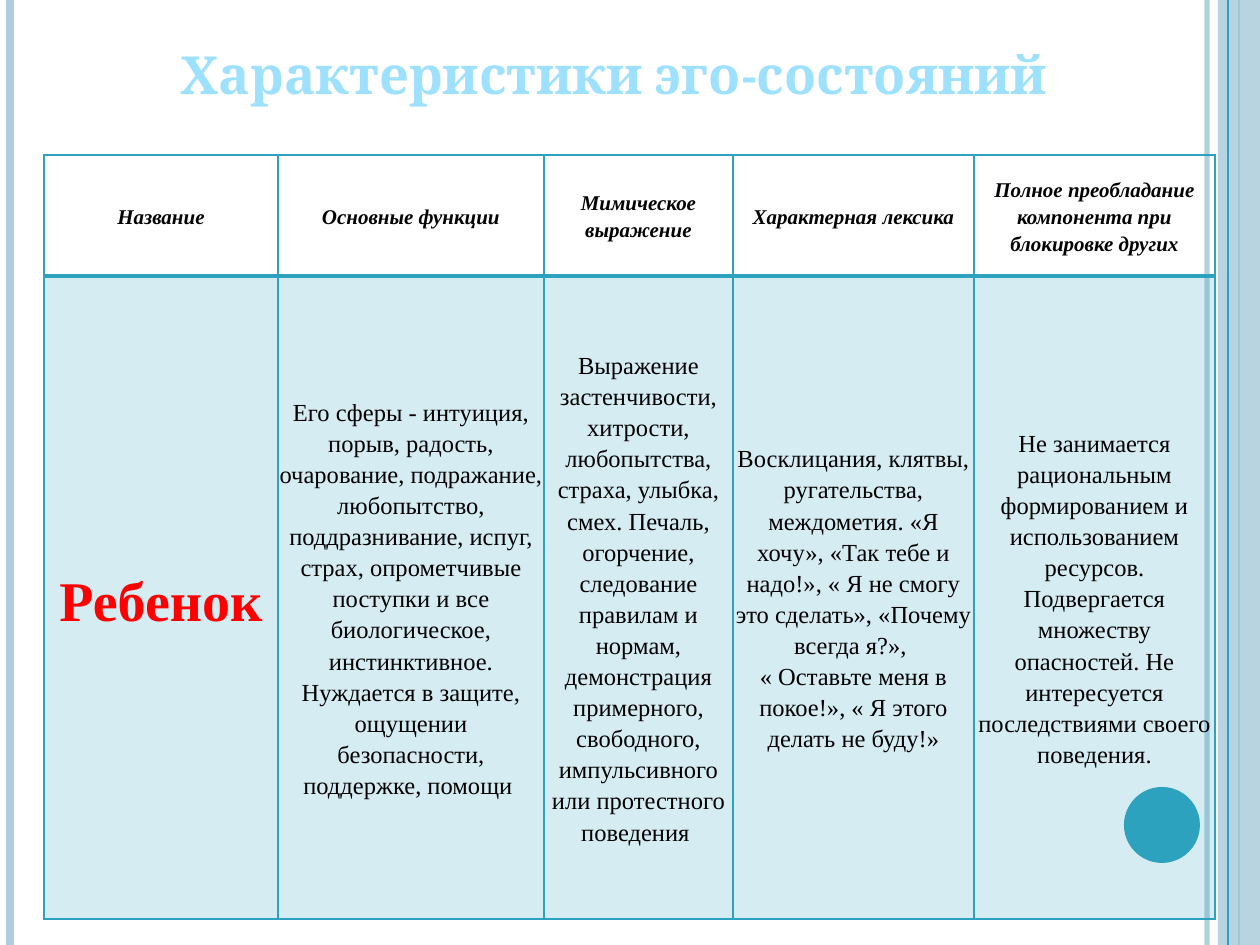
from pptx import Presentation
from pptx import util as u
from pptx.dml.color import RGBColor
from pptx.enum import shapes, text
from pptx.oxml import parse_xml
from pptx.oxml.ns import nsdecls, qn

PX = 914400 / 126
WIDE, HIGH = 1260, 945
HEX = {"teal": "2DA2BF", "pale": "ADCEDC", "sky": "9DE1FF",
       "red": "FF0000", "black": "000000"}
SERIF = "Times New Roman"

TITLE = "Характеристики эго-состояний"
HEADS = ["Название", "Основные функции", "Мимическое выражение",
         "Характерная лексика",
         "Полное преобладание компонента при блокировке других"]
CHILD = [
    "Ребенок",
    "Его сферы - интуиция, порыв, радость, очарование, подражание, "
    "любопытство, поддразнивание, испуг, страх, опрометчивые поступки и все "
    "биологическое, инстинктивное. Нуждается в защите, ощущении "
    "безопасности, поддержке, помощи ",
    "Выражение застенчивости, хитрости, любопытства, страха, улыбка, смех. "
    "Печаль, огорчение, следование правилам и нормам, демонстрация "
    "примерного, свободного, импульсивного или протестного поведения ",
    "Восклицания, клятвы, ругательства, междометия. «Я хочу», «Так тебе и "
    "надо!», « Я не смогу это сделать», «Почему всегда я?», \n"
    "« Оставьте меня в покое!», « Я этого делать не буду!»",
    "Не занимается рациональным формированием и использованием ресурсов. "
    "Подвергается множеству опасностей. Не интересуется последствиями "
    "своего поведения.",
]
COLS = [234, 266, 189, 241, 241]
ROWS = [121, 643]
# x, colour, width in points, opacity in percent
BACK = [(1207, "pale", 3, 93), (10, "pale", 4.5, 100),
        (1239, "teal", 1.5, 100)]
FRONT = [(1228, "teal", 0.75, 100)]


def px(n):
    return u.Emu(round(n * PX))


def rgb(name):
    return RGBColor.from_string(HEX[name])


def fade(node, pct):
    """Make every colour below the XML node partly transparent."""
    for tone in node.iter(qn("a:srgbClr")):
        tone.append(parse_xml(
            f'<a:alpha {nsdecls("a")} val="{pct * 1000}"/>'))


def stripe(slide, x, color, width, pct):
    line = slide.shapes.add_connector(
        shapes.MSO_CONNECTOR.STRAIGHT, px(x), 0, px(x), px(HIGH))
    line.line.color.rgb = rgb(color)
    line.line.width = u.Pt(width)
    props = line.element.spPr
    props.append(parse_xml(f'<a:effectLst {nsdecls("a")}/>'))
    if pct < 100:
        fade(props, pct)


def solid(slide, kind, box, color, pct=100):
    shape = slide.shapes.add_shape(kind, *map(px, box))
    shape.shadow.inherit = False
    shape.fill.solid()
    shape.fill.fore_color.rgb = rgb(color)
    shape.line.fill.background()
    if pct < 100:
        fade(shape.element.spPr, pct)


def write(frame, words, size, color="black", font=SERIF, bold=False,
          italic=False, space=1.0):
    frame.text = words
    frame.word_wrap = True
    for para in frame.paragraphs:
        para.alignment = text.PP_ALIGN.CENTER
        para.line_spacing = space
        for run in para.runs:
            face = run.font
            face.name, face.size = font, u.Pt(size)
            face.bold, face.italic = bold, italic
            face.color.rgb = rgb(color)


def border(cell, widths):
    """Draw the left, right, top and bottom edges, widths in points."""
    props = cell._tc.get_or_add_tcPr()
    for i, (side, width) in enumerate(zip("LRTB", widths)):
        props.insert(i, parse_xml(
            f'<a:ln{side} {nsdecls("a")} w="{width * 12700}"><a:solidFill>'
            f'<a:srgbClr val="{HEX["teal"]}"/></a:solidFill></a:ln{side}>'))


def fill_table(slide):
    table = slide.shapes.add_table(
        len(ROWS), len(COLS), px(44), px(155),
        px(sum(COLS)), px(sum(ROWS))).table
    for col, width in zip(table.columns, COLS):
        col.width = px(width)
    for row, height in zip(table.rows, ROWS):
        row.height = px(height)
    for r, line in enumerate([HEADS, CHILD]):
        for c, words in enumerate(line):
            cell = table.cell(r, c)
            cell.vertical_anchor = text.MSO_ANCHOR.MIDDLE
            cell.margin_left = cell.margin_right = px(1)
            cell.margin_top = cell.margin_bottom = px(1)
            if r == 0:
                look = dict(size=12, bold=True, italic=True)
            elif c == 0:
                look = dict(size=32, bold=True, color="red")
            else:
                look = dict(size=14)
            write(cell.text_frame, words, space=1.15, **look)
            if r == 0:
                cell.fill.background()
                border(cell, (1, 1, 1, 2))
            else:
                cell.fill.solid()
                cell.fill.fore_color.rgb = rgb("teal")
                fade(cell._tc.get_or_add_tcPr(), 20)
                border(cell, (1, 1, 2, 1))


def main():
    deck = Presentation()
    deck.slide_width, deck.slide_height = px(WIDE), px(HIGH)
    slide = deck.slides.add_slide(deck.slide_layouts[5])
    for item in BACK:
        stripe(slide, *item)
    solid(slide, shapes.MSO_SHAPE.RECTANGLE, (1218, 0, 42, HIGH), "pale", 87)
    for item in FRONT:
        stripe(slide, *item)
    solid(slide, shapes.MSO_SHAPE.OVAL, (1124, 787, 76, 76), "teal")

    title = slide.shapes.title
    title.left, title.top, title.width, title.height = map(
        px, (65, 1, 1099, 110))
    title.text_frame.vertical_anchor = text.MSO_ANCHOR.BOTTOM
    write(title.text_frame, TITLE, 30, "sky", "Cambria", bold=True)

    fill_table(slide)
    deck.save("out.pptx")


if __name__ == "__main__":
    main()
